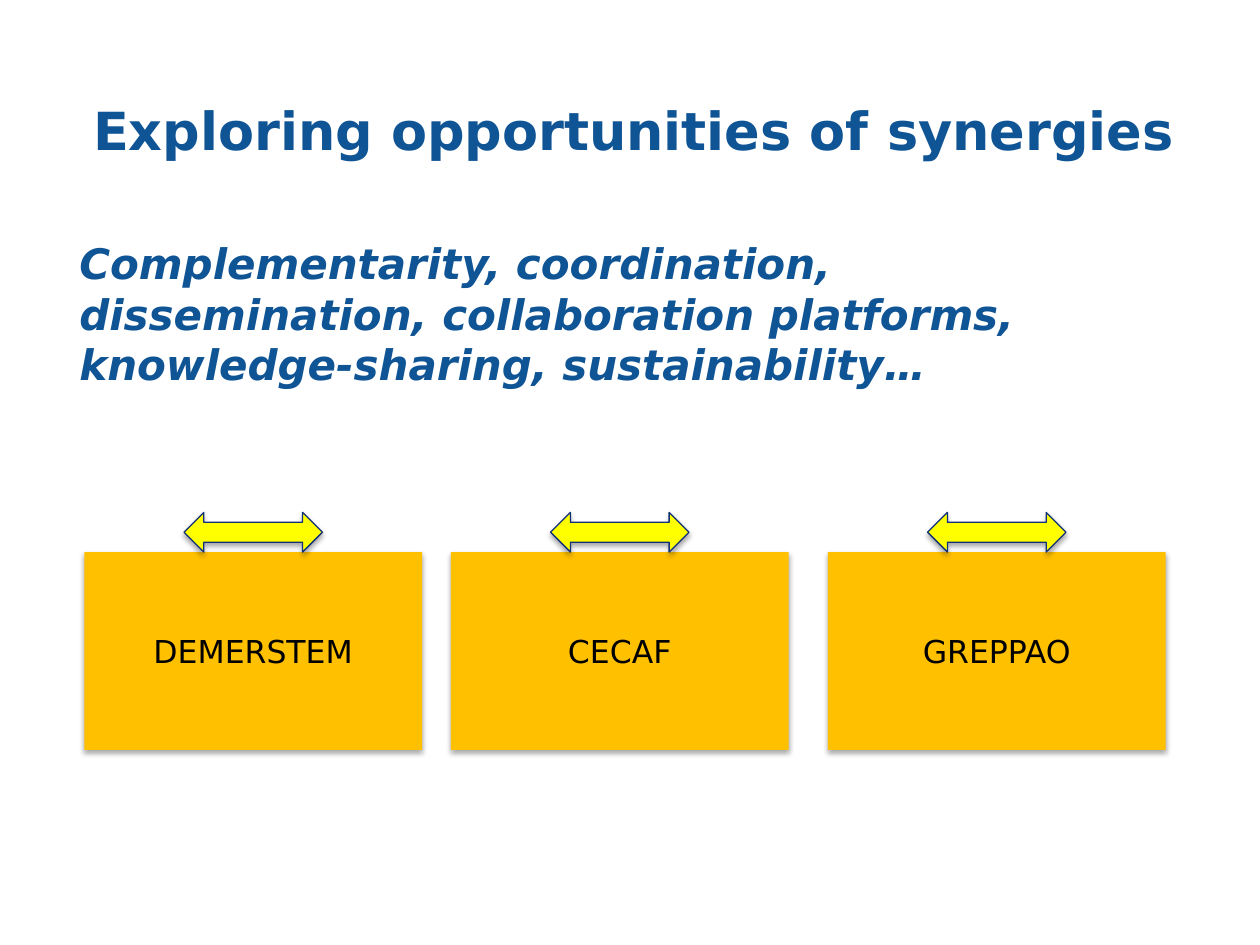
from lxml.etree import SubElement as Sub
from pptx import Presentation
from pptx.dml.color import RGBColor as Rgb
from pptx.enum.shapes import MSO_SHAPE as Kind
from pptx.enum.text import MSO_ANCHOR as Anchor, PP_ALIGN as Align
from pptx.oxml.ns import qn
from pptx.util import Cm, Pt

BLUE = Rgb(0x0F, 0x54, 0x94)
NAVY = Rgb(0x13, 0x31, 0x76)
GOLD = Rgb(0xFF, 0xC0, 0x00)
YELLOW = Rgb(0xFF, 0xFF, 0x00)
BLACK = Rgb(0, 0, 0)
FONT = "DejaVu Sans"
GROUPS = [("DEMERSTEM", 1.7), ("CECAF", 9.09), ("GREPPAO", 16.69)]
BOX_W, BOX_H, BOX_TOP = 6.81, 3.99, 11.13
ARROW_W, ARROW_H = 2.79, 0.8


def write(frame, text, size, color, align, bold=False, slant=False):
    frame.word_wrap = True
    frame.text = text
    para = frame.paragraphs[0]
    para.alignment = align
    font = para.runs[0].font
    font.name, font.size = FONT, Pt(size)
    font.bold, font.italic = bold, slant
    font.color.rgb = color


def add_text(slide, area, text, size, align, anchor, slant=False):
    frame = slide.shapes.add_textbox(*map(Cm, area)).text_frame
    write(frame, text, size, BLUE, align, True, slant)
    frame.vertical_anchor = anchor


def add_shade(shape):
    """Give the shape a soft black shadow that falls straight down."""
    shape.shadow.inherit = False
    effects = shape._element.spPr.find(qn("a:effectLst"))
    shade = Sub(effects, qn("a:outerShdw"), blurRad=str(Pt(3.1)),
                dist=str(Pt(1.8)), dir="5400000", rotWithShape="0")
    color = Sub(shade, qn("a:srgbClr"), val=str(BLACK))
    Sub(color, qn("a:alpha"), val="35000")


def add_form(slide, kind, area, fill):
    shape = slide.shapes.add_shape(kind, *map(Cm, area))
    shape.fill.solid()
    shape.fill.fore_color.rgb = fill
    shape.line.fill.background()
    add_shade(shape)
    return shape


def add_box(slide, name, left):
    area = (left, BOX_TOP, BOX_W, BOX_H)
    box = add_form(slide, Kind.RECTANGLE, area, GOLD)
    write(box.text_frame, name, 18, BLACK, Align.CENTER)
    box.text_frame.vertical_anchor = Anchor.MIDDLE


def add_arrow(slide, left):
    area = (left + (BOX_W - ARROW_W) / 2, BOX_TOP - ARROW_H, ARROW_W, ARROW_H)
    arrow = add_form(slide, Kind.LEFT_RIGHT_ARROW, area, YELLOW)
    arrow.line.color.rgb = NAVY
    arrow.line.width = Pt(0.75)


def main():
    deck = Presentation()
    deck.slide_width, deck.slide_height = Cm(25.4), Cm(19.05)
    slide = deck.slides.add_slide(deck.slide_layouts[6])
    add_text(slide, (1.35, 1.32, 22.86, 2.59),
             "Exploring opportunities of synergies",
             30, Align.CENTER, Anchor.MIDDLE)
    add_text(slide, (1.35, 4.67, 22.8, 10.08),
             "Complementarity, coordination, dissemination, collaboration "
             "platforms, knowledge-sharing, sustainability…",
             24, Align.LEFT, Anchor.TOP, slant=True)
    for name, left in GROUPS:
        add_box(slide, name, left)
    for _, left in GROUPS:
        add_arrow(slide, left)
    deck.save("out.pptx")


if __name__ == "__main__":
    main()
